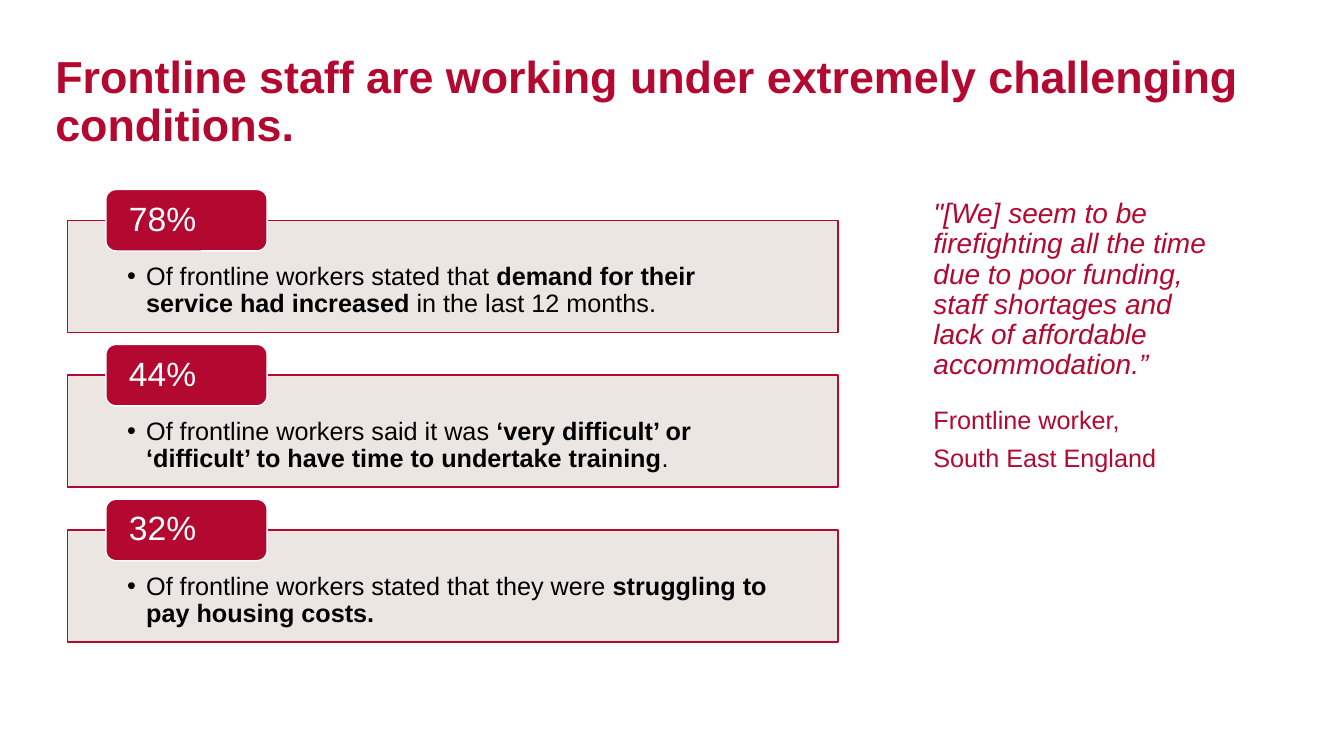
from lxml.etree import SubElement
from pptx import Presentation
from pptx.dml.color import RGBColor
from pptx.enum.shapes import MSO_SHAPE as Preset
from pptx.enum.text import MSO_ANCHOR as Anchor, PP_ALIGN as Align
from pptx.oxml.ns import qn
from pptx.util import Inches, Pt

COLORS = {"red": "B30931", "beige": "EAE4E0", "white": "FFFFFF", "black": "000000"}
FONT = "Arial"
FINDINGS = [
    ("78%", [("Of frontline workers stated that", False),
             (" demand for their service had increased", True),
             (" in the last 12 months.", False)]),
    ("44%", [("Of frontline workers said it was ", False),
             ("‘very difficult’ or ‘difficult’ to have time to undertake training", True),
             (".", False)]),
    ("32%", [("Of frontline workers stated that they were ", False),
             ("struggling to pay housing costs.", True)]),
]


def color(name):
    return RGBColor.from_string(COLORS[name])


def set_frame(shape, insets=(0.1, 0.05, 0.1, 0.05), anchor=Anchor.TOP):
    frame = shape.text_frame
    frame.word_wrap = True
    frame.vertical_anchor = anchor
    left, top, right, bottom = insets
    frame.margin_left, frame.margin_right = Inches(left), Inches(right)
    frame.margin_top, frame.margin_bottom = Inches(top), Inches(bottom)
    return frame


def add_bullet(paragraph, indent):
    properties = paragraph._p.get_or_add_pPr()
    properties.set("marL", str(Inches(indent)))
    properties.set("indent", str(-Inches(indent)))
    SubElement(properties, qn("a:buFont")).set("typeface", FONT)
    SubElement(properties, qn("a:buChar")).set("char", "•")


def write(paragraph, text, size=18, fill="red", bold=False, italic=False,
          before=0, bullet=None):
    if bullet:
        add_bullet(paragraph, bullet)
    paragraph.alignment = Align.LEFT
    paragraph.line_spacing = 0.9
    paragraph.space_before = Pt(before)
    paragraph.font.size = Pt(size)
    paragraph.font.name = FONT
    parts = [(text, bold)] if isinstance(text, str) else text
    for words, strong in parts:
        run = paragraph.add_run()
        run.text = words
        run.font.name = FONT
        run.font.size = Pt(size)
        run.font.bold = strong
        run.font.italic = italic
        run.font.color.rgb = color(fill)


def add_box(slide, preset, left, top, width, height, fill, line):
    shape = slide.shapes.add_shape(
        preset, Inches(left), Inches(top), Inches(width), Inches(height))
    shape.shadow.inherit = False
    shape.fill.solid()
    shape.fill.fore_color.rgb = color(fill)
    shape.line.color.rgb = color(line)
    shape.line.width = Pt(1)
    return shape


def add_title(slide, left, top, width, height):
    title = slide.shapes.add_textbox(
        Inches(left), Inches(top), Inches(width), Inches(height))
    frame = set_frame(title, anchor=Anchor.MIDDLE)
    write(frame.paragraphs[0],
          "Frontline staff are working under extremely challenging conditions.",
          size=32, bold=True)


def add_finding(slide, left, top, width, height, percentage, statement):
    tab_height = 0.61
    panel_top = top + tab_height / 2
    panel = add_box(slide, Preset.RECTANGLE, left, panel_top, width,
                    height - tab_height / 2, "beige", "red")
    solid = panel.fill._xPr.find(qn("a:solidFill"))
    SubElement(solid[0], qn("a:alpha")).set("val", "90000")
    frame = set_frame(panel, (0.59, 0.43, 0.59, 0.14))
    write(frame.paragraphs[0], statement, fill="black", bullet=0.19)

    tab = add_box(slide, Preset.ROUNDED_RECTANGLE, left + 0.38, top, 1.6,
                  tab_height, "red", "white")
    frame = set_frame(tab, (0.2, 0, 0.2, 0), Anchor.MIDDLE)
    write(frame.paragraphs[0], percentage, size=24, fill="white")


def add_findings(slide, left, top, width, height, gap=0.12):
    item_height = (height - gap * (len(FINDINGS) - 1)) / len(FINDINGS)
    for index, (percentage, statement) in enumerate(FINDINGS):
        add_finding(slide, left, top + index * (item_height + gap), width,
                    item_height, percentage, statement)


def add_quote(slide, left, top, width, height):
    quote = slide.shapes.add_textbox(
        Inches(left), Inches(top), Inches(width), Inches(height))
    frame = set_frame(quote)
    write(frame.paragraphs[0],
          "\"[We] seem to be firefighting all the time due to poor funding, "
          "staff shortages and lack of affordable accommodation.”",
          size=20, italic=True)
    write(frame.add_paragraph(), "Frontline worker,", before=19)
    write(frame.add_paragraph(), "South East England", before=8)


def main():
    presentation = Presentation()
    presentation.slide_width = Inches(13.33)
    presentation.slide_height = Inches(7.5)
    slide = presentation.slides.add_slide(presentation.slide_layouts[6])
    add_title(slide, 0.45, 0.5, 12.44, 1.04)
    add_quote(slide, 9.16, 1.93, 3.07, 2.46)
    add_findings(slide, 0.67, 1.88, 7.64, 4.49)
    presentation.save("out.pptx")


if __name__ == "__main__":
    main()
